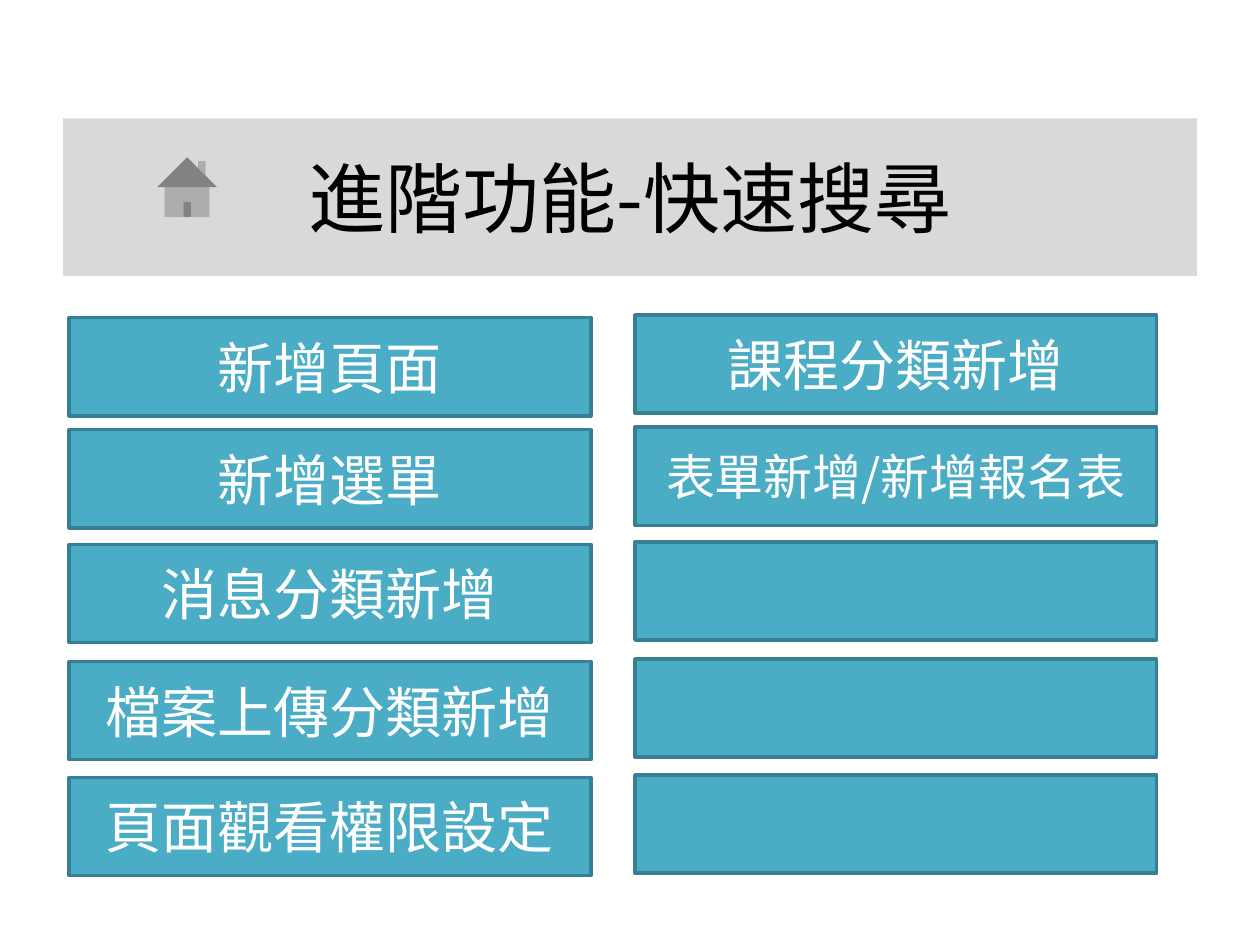
import pptx
import pptx.util
import pptx.dml.color
import pptx.enum.shapes
import pptx.enum.text
import pptx.oxml.ns
import lxml.etree

Inches = pptx.util.Inches
SHAPE = pptx.enum.shapes.MSO_SHAPE

TITLE = "進階功能-快速搜尋"
# Each column: left, top offset, then (label, size) for each button
COLUMNS = [
    (0.55, 0, [("新增頁面", 32), ("新增選單", 32), ("消息分類新增", 32),
               ("檔案上傳分類新增", 32), ("頁面觀看權限設定", 32)]),
    (5.04, -0.02, [("課程分類新增", 32), ("表單新增/新增報名表", 28),
                   ("", 32), ("", 32), ("", 32)]),
]
ROWS = [2.52, 3.41, 4.32, 5.25, 6.17]
WIDTH, HEIGHT = 4.14, 0.78
FONT = "Noto Sans CJK SC"
COLORS = {"band": "D9D9D9", "button": "4BACC6", "edge": "377F92",
          "dark": "000000", "light": "FFFFFF"}


def color(name):
    return pptx.dml.color.RGBColor.from_string(COLORS[name])


def paint(shape, fill):
    shape.fill.solid()
    shape.fill.fore_color.rgb = color(fill)


def write(shape, text, size, ink):
    frame = shape.text_frame
    frame.word_wrap = True
    frame.vertical_anchor = pptx.enum.text.MSO_ANCHOR.MIDDLE
    para = frame.paragraphs[0]
    para.alignment = pptx.enum.text.PP_ALIGN.CENTER
    run = para.add_run()
    run.text = text
    run.font.size = pptx.util.Pt(size)
    run.font.color.rgb = color(ink)
    run.font.name = FONT
    east = lxml.etree.SubElement(run.font._element, pptx.oxml.ns.qn("a:ea"))
    east.set("typeface", FONT)


def add_shape(slide, kind, box, fill):
    shape = slide.shapes.add_shape(kind, *map(Inches, box))
    shape.shadow.inherit = False
    paint(shape, fill)
    return shape


def add_button(slide, left, top, label, size):
    button = add_shape(slide, SHAPE.RECTANGLE, (left, top, WIDTH, HEIGHT), "button")
    button.line.color.rgb = color("edge")
    button.line.width = pptx.util.Pt(2)
    if label:
        write(button, label, size, "light")


def main():
    deck = pptx.Presentation()
    deck.slide_width, deck.slide_height = Inches(10), Inches(7.5)
    slide = deck.slides.add_slide(deck.slide_layouts[5])

    title = slide.shapes.title
    title.left, title.top = Inches(0.5), Inches(0.94)
    title.width, title.height = Inches(9), Inches(1.25)
    paint(title, "band")
    write(title, TITLE, 44, "dark")

    home = add_shape(slide, SHAPE.ACTION_BUTTON_HOME, (1.17, 1.17, 0.63, 0.63), "band")
    home.line.fill.background()

    for left, shift, labels in COLUMNS:
        for top, (label, size) in zip(ROWS, labels):
            add_button(slide, left, top + shift, label, size)

    deck.save("out.pptx")


if __name__ == "__main__":
    main()
